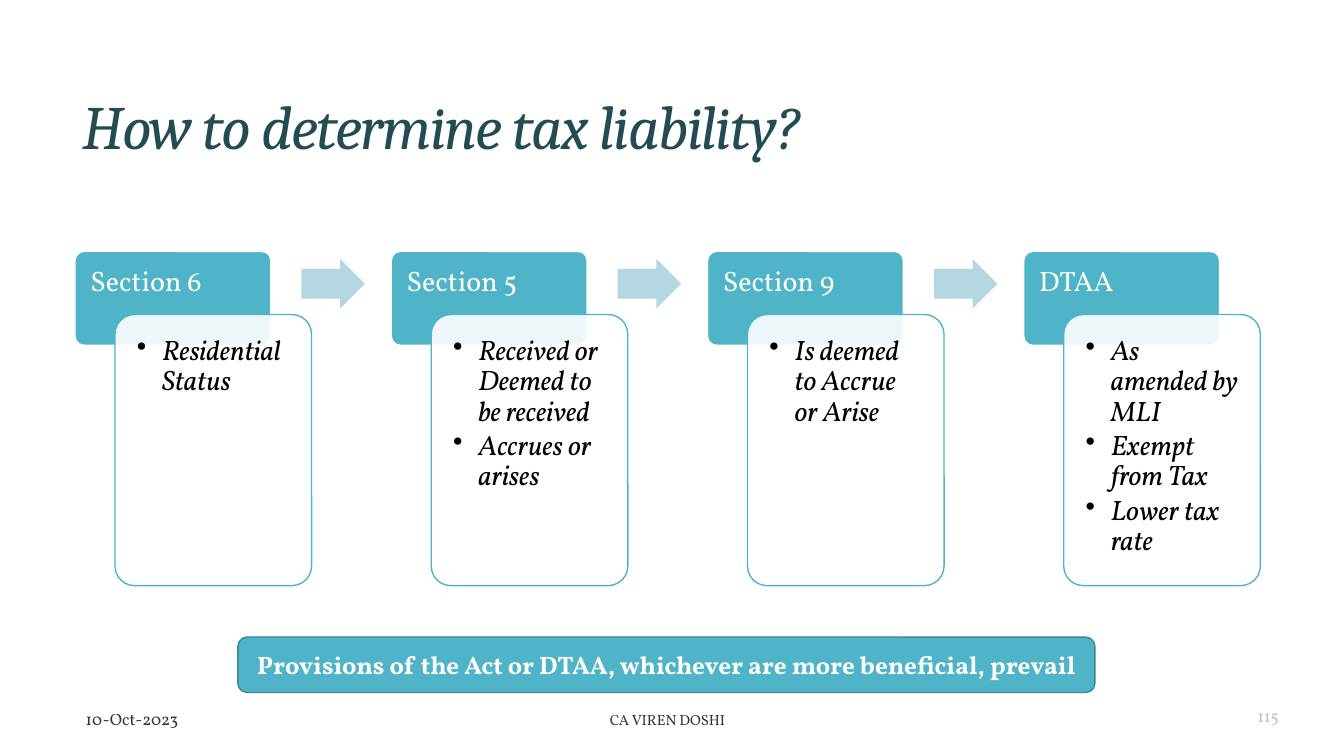
from pptx import Presentation
from pptx.dml.color import RGBColor
from pptx.enum import shapes, text
from pptx.oxml.ns import qn
from pptx.util import Inches, Pt
from lxml import etree

# Content
TITLE = "How to determine tax liability?"
STEPS = [
    ("Section 6", ["Residential Status"]),
    ("Section 5", ["Received or Deemed to be received", "Accrues or arises"]),
    ("Section 9", ["Is deemed to Accrue or Arise"]),
    ("DTAA", ["As amended by MLI", "Exempt from Tax", "Lower tax rate"]),
]
RULE = "Provisions of the Act or DTAA, whichever are more beneficial, prevail"
DATE, AUTHOR, PAGE = "10-Oct-2023", "CA VIREN DOSHI", "115"

# Theme
THEME = {
    "head": "Cambria", "body": "Vollkorn",
    "dark": "234B52", "teal": "50B4C8", "edge": "3B8594",
    "pale": "B3D6E0", "white": "FFFFFF", "black": "000000",
    "title": 44, "step": 20, "rule": 18, "foot": 12, "name": 10.5,
}

# Grid: equal columns across the slide
WIDE, HIGH = 13.33, 7.5
LEFT, LAST = 0.74, 10.15
PITCH = (LAST - LEFT) / (len(STEPS) - 1)
TOP, TAB_W, TAB_H = 2.49, 1.95, 0.94
CARD_DX, CARD_DY, CARD_H = 0.4, 0.63, 2.69
ARROW_DX, ARROW_DY, ARROW_W, ARROW_H = 2.25, 0.08, 0.63, 0.49
SIDE = text.PP_ALIGN
MID, LOW, HEAD = (text.MSO_ANCHOR.MIDDLE, text.MSO_ANCHOR.BOTTOM,
                  text.MSO_ANCHOR.TOP)
ROUND = shapes.MSO_SHAPE.ROUNDED_RECTANGLE
ARROW = shapes.MSO_SHAPE.RIGHT_ARROW

deck = Presentation()
deck.slide_width, deck.slide_height = Inches(WIDE), Inches(HIGH)
slide = deck.slides.add_slide(deck.slide_layouts[6])


def rgb(name):
    return RGBColor.from_string(THEME[name])


def fade(fill, share):
    """Make a solid fill partly clear."""
    tone = fill._xPr.find(".//" + qn("a:srgbClr"))
    etree.SubElement(tone, qn("a:alpha"), val=str(share * 1000))


def draw(kind, box, fill, line=None, width=1, adj=(), alpha=None):
    item = slide.shapes.add_shape(kind, *map(Inches, box))
    item.shadow.inherit = False
    item.fill.solid()
    item.fill.fore_color.rgb = rgb(fill)
    if alpha:
        fade(item.fill, alpha)
    if line:
        item.line.color.rgb = rgb(line)
        item.line.width = Pt(width)
    else:
        item.line.fill.background()
    for i, value in enumerate(adj):
        item.adjustments[i] = value
    return item


def write(item, lines, size, color, face="body", side=SIDE.LEFT, anchor=MID,
          inset=(0.1, 0.05, 0.1, 0.05), space=1, after=0, bold=False,
          slant=False, dots=False, alpha=None, track=None):
    frame = item.text_frame
    frame.word_wrap = True
    frame.vertical_anchor = anchor
    (frame.margin_left, frame.margin_top,
     frame.margin_right, frame.margin_bottom) = map(Inches, inset)
    for i, line in enumerate(lines):
        para = frame.add_paragraph() if i else frame.paragraphs[0]
        para.alignment = side
        para.line_spacing = space
        para.space_after = Pt(after)
        if dots:
            props = para._p.get_or_add_pPr()
            props.set("marL", str(Inches(0.25)))
            props.set("indent", str(-Inches(0.25)))
            etree.SubElement(props, qn("a:buChar"), char="•")
        run = para.add_run()
        run.text = line
        font = run.font
        font.name, font.size = THEME[face], Pt(THEME[size])
        font.bold, font.italic = bold, slant
        font.color.rgb = rgb(color)
        if alpha:
            fade(font.fill, alpha)
        if track:
            run._r.get_or_add_rPr().set("spc", str(int(track * 100)))


def label(box, line, size, color, **look):
    write(slide.shapes.add_textbox(*map(Inches, box)), [line], size, color,
          **look)


# Title
label((0.72, 0.39, 11.78, 1.81), TITLE, "title", "dark", face="head",
      space=0.85, slant=True, track=-1.2)

# Footer
label((0.75, 7.01, 4.5, 0.25), DATE, "foot", "black", alpha=80)
label((3.87, 7.01, 5.5, 0.25), AUTHOR, "name", "black", side=SIDE.CENTER,
      alpha=80)
label((9.7, 7.01, 3.08, 0.24), PAGE, "foot", "black", side=SIDE.RIGHT,
      anchor=LOW, alpha=25)

# Steps: tab, overlapping card, arrow to the next step
for col, (name, points) in enumerate(STEPS):
    x = LEFT + col * PITCH
    tab = draw(ROUND, (x, TOP, TAB_W, TAB_H), "teal", "white", 1.5, [0.1])
    write(tab, [name], "step", "white", anchor=HEAD, space=0.9, after=7,
          inset=(0.13, 0.13, 0.13, 0.05))
    card = draw(ROUND, (x + CARD_DX, TOP + CARD_DY, TAB_W, CARD_H),
                "white", "teal", 1, [0.1], alpha=90)
    write(card, points, "step", "black", anchor=HEAD, space=0.9, after=3,
          inset=(0.16,) * 4, slant=True, dots=True)
    if col < len(STEPS) - 1:
        draw(ARROW, (x + ARROW_DX, TOP + ARROW_DY, ARROW_W, ARROW_H),
             "pale", adj=(0.6, 0.5))

# Closing rule
bar = draw(ROUND, (2.36, 6.32, 8.5, 0.55), "teal", "edge")
write(bar, [RULE], "rule", "white", side=SIDE.CENTER, bold=True)

deck.save("out.pptx")
